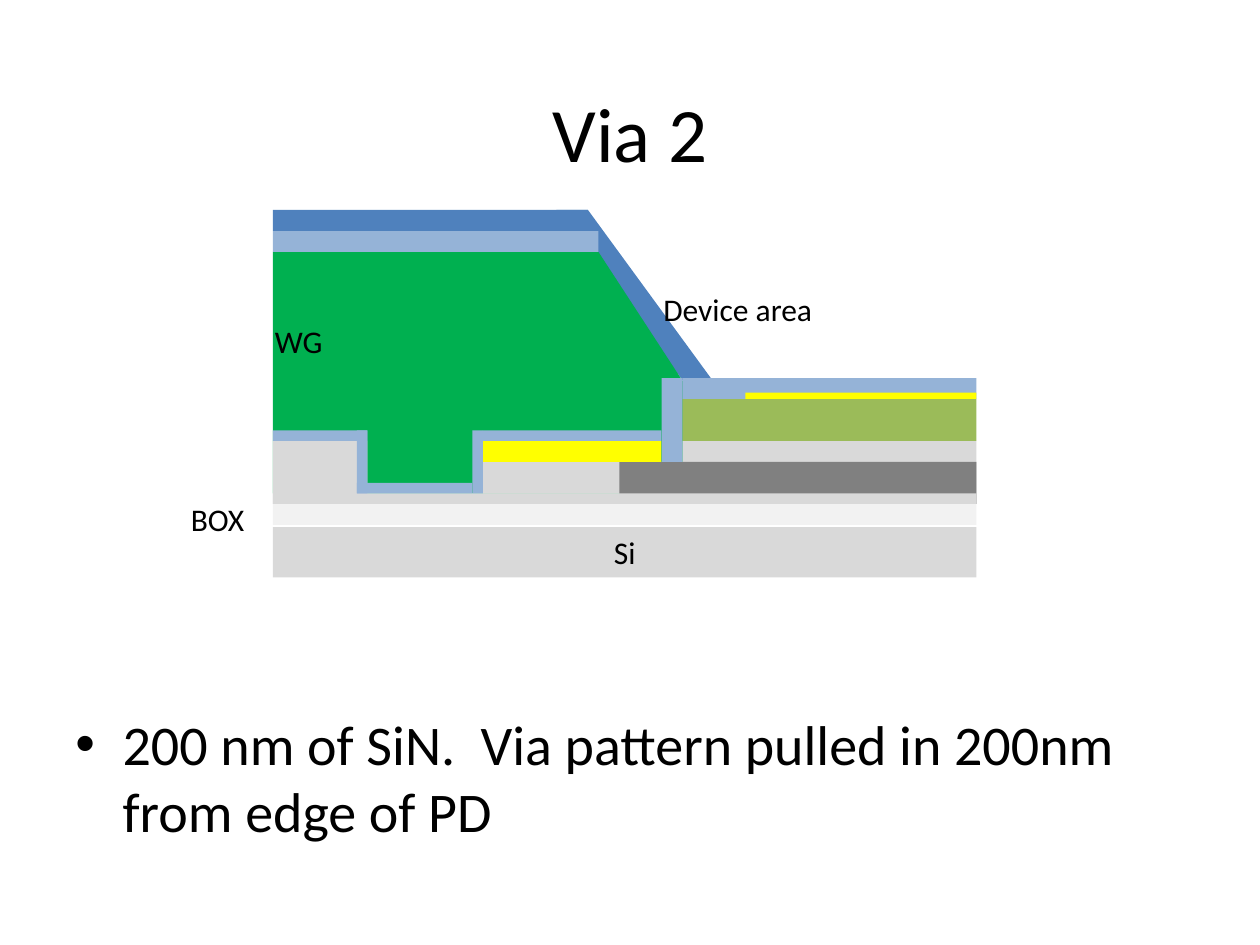
from pptx import Presentation
from pptx.dml.color import RGBColor
from pptx.enum.shapes import MSO_SHAPE
from pptx.enum.text import MSO_ANCHOR, PP_ALIGN
from pptx.oxml.xmlchemy import OxmlElement
from pptx.util import Inches, Pt

CELL = Inches(1) // 12  # the grid has 120 columns and 90 rows
SILICON, OXIDE, DOPED = "D9D9D9", "F2F2F2", "808080"
POLYMER, METAL, DIODE = "00B050", "FFFF00", "9BBB59"
NITRIDE, NEW_NITRIDE = "95B3D7", "4F81BD"
TEXT = "000000"

# colour, column, row, columns wide, rows high; from back to front
LAYERS = [
    (SILICON, 46, 44, 47, 3),
    (SILICON, 65, 42, 28, 6),
    (SILICON, 26, 42, 9, 6),
    (SILICON, 26, 50.2, 67, 4.8),
    (OXIDE, 26, 48, 67, 2),
    (DOPED, 59, 44, 34, 4),
    (DIODE, 65, 38, 28, 4),
    (SILICON, 26, 47, 67, 1),
    (NITRIDE, 65, 36, 28, 2),
    (METAL, 71, 37.4, 22, 0.6),
    (METAL, 46, 42, 17, 2),
    (NITRIDE, 63, 36, 2, 8),
    (NITRIDE, 45, 41, 1, 6),
    (NITRIDE, 34, 41, 1, 6),
    (NITRIDE, 26, 41, 9, 1),
    (NITRIDE, 34, 46, 11, 1),
    (NITRIDE, 46, 41, 17, 1),
    (NITRIDE, 26, 22, 31, 2),
    (NEW_NITRIDE, 26, 20, 30, 2),
]

# text, column, row, columns wide, rows high, alignment
LABELS = [
    ("Si", 26, 50.2, 67, 4.8, PP_ALIGN.CENTER),
    ("BOX", 17, 47, 8, 5, PP_ALIGN.LEFT),
    ("Device area", 62, 27, 19, 4.8, PP_ALIGN.LEFT),
    ("WG", 25, 30.1, 19, 4.8, PP_ALIGN.LEFT),
]


def color(hex_value):
    return RGBColor.from_string(hex_value)


def cells(*counts):
    """Turn grid counts into lengths."""
    return [round(count * CELL) for count in counts]


class CrossSection:
    """Style and current slide, with one method per kind of element."""

    font = "Calibri"

    def __init__(self, slide):
        self.slide = slide
        self.shapes = slide.shapes

    def paint(self, shape, fill):
        shape.shadow.inherit = False
        shape.fill.solid()
        shape.fill.fore_color.rgb = color(fill)
        shape.line.fill.background()

    def add_text(self, frame, text, size, align=PP_ALIGN.LEFT):
        frame.word_wrap = True
        para = frame.paragraphs[0]
        para.alignment = align
        span = para.add_run()
        span.text = text
        span.font.name = self.font
        span.font.size = Pt(size)
        span.font.color.rgb = color(TEXT)
        return para

    def title(self, text, *grid):
        box = self.shapes.title
        box.left, box.top, box.width, box.height = cells(*grid)
        box.text_frame.vertical_anchor = MSO_ANCHOR.MIDDLE
        self.add_text(box.text_frame, text, 44, PP_ALIGN.CENTER)

    def label(self, text, *grid, size=18, align=PP_ALIGN.LEFT):
        box = self.shapes.add_textbox(*cells(*grid))
        return self.add_text(box.text_frame, text, size, align)

    def bullet(self, text, *grid, size=32):
        para = self.label(text, *grid, size=size)
        para.space_before = Pt(size * 0.2)
        properties = para._p.get_or_add_pPr()
        indent = Inches(0.375)
        properties.set("marL", str(indent))
        properties.set("indent", str(-indent))
        for tag, key, value in (("a:buFont", "typeface", "Arial"),
                                ("a:buChar", "char", "•")):
            mark = OxmlElement(tag)
            mark.set(key, value)
            properties.append(mark)

    def layer(self, fill, *grid):
        shape = self.shapes.add_shape(MSO_SHAPE.RECTANGLE, *cells(*grid))
        self.paint(shape, fill)

    def outline(self, fill, start, *points):
        builder = self.shapes.build_freeform(*start, scale=CELL)
        builder.add_line_segments(points, close=True)
        self.paint(builder.convert_to_shape(), fill)


def main():
    deck = Presentation()
    deck.slide_width, deck.slide_height = Inches(10), Inches(7.5)
    page = CrossSection(deck.slides.add_slide(deck.slide_layouts[5]))

    page.title("Via 2", 6, 5, 108, 15)
    page.outline(NEW_NITRIDE, (56, 20), (74.6, 46.2), (73.1, 47.4), (53.3, 20))
    page.outline(POLYMER, (26, 24), (57, 24), (72, 47), (26, 47))
    for fill, *grid in LAYERS:
        page.layer(fill, *grid)
    for text, *grid, align in LABELS:
        page.label(text, *grid, align=align)
    page.bullet("200 nm of SiN.  Via pattern pulled in 200nm from edge of PD",
                6, 67, 108, 17)
    deck.save("out.pptx")


if __name__ == "__main__":
    main()
